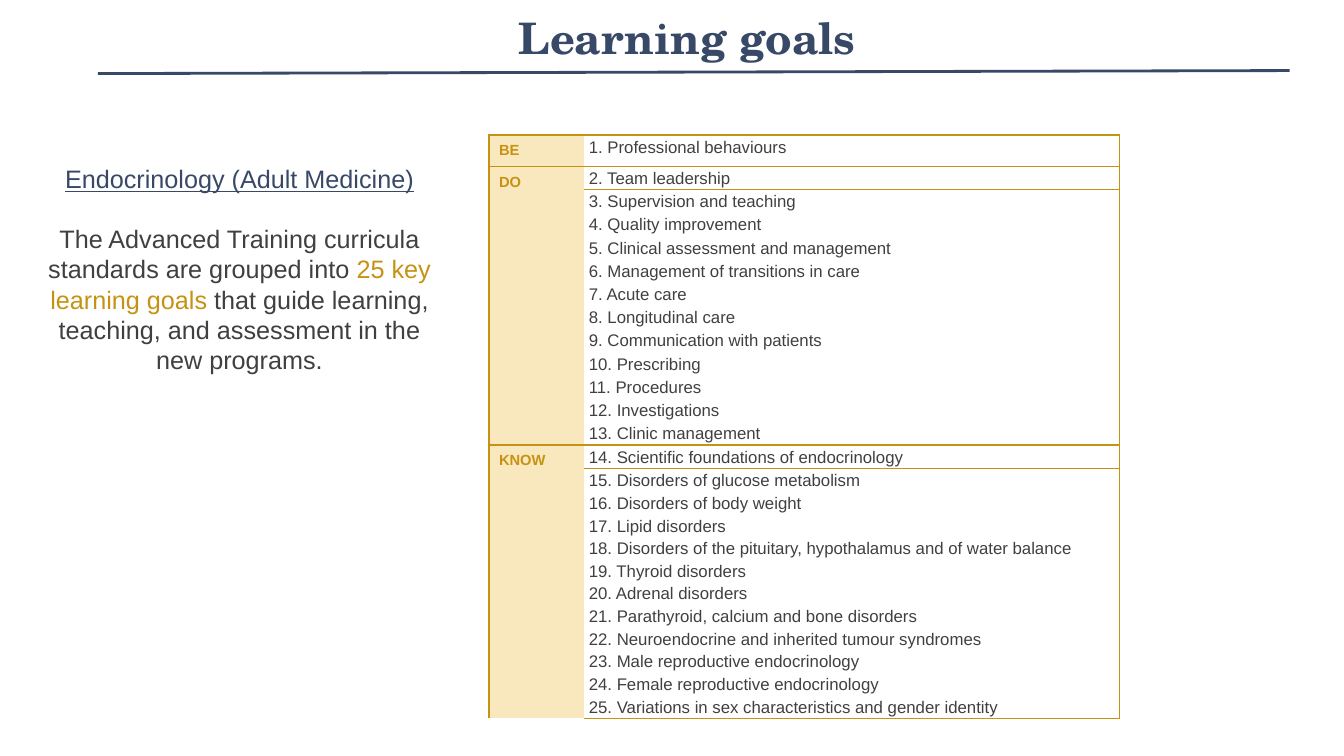
from lxml import etree
from pptx import Presentation
from pptx.dml.color import RGBColor
from pptx.enum import shapes, text
from pptx.oxml import ns
from pptx.util import Inches, Pt

COLORS = {"navy": "384967", "gold": "C69214", "cream": "F9E8BD", "grey": "404040"}
NO_STYLE = "{2D5ABB26-0587-4C30-8999-92F81FD0307C}"
GOALS = {
    "BE": ["Professional behaviours"],
    "DO": [
        "Team leadership", "Supervision and teaching", "Quality improvement",
        "Clinical assessment and management", "Management of transitions in care",
        "Acute care", "Longitudinal care", "Communication with patients",
        "Prescribing", "Procedures", "Investigations", "Clinic management",
    ],
    "KNOW": [
        "Scientific foundations of endocrinology", "Disorders of glucose metabolism",
        "Disorders of body weight", "Lipid disorders",
        "Disorders of the pituitary, hypothalamus and of water balance",
        "Thyroid disorders", "Adrenal disorders",
        "Parathyroid, calcium and bone disorders",
        "Neuroendocrine and inherited tumour syndromes",
        "Male reproductive endocrinology", "Female reproductive endocrinology",
        "Variations in sex characteristics and gender identity",
    ],
}
COMPACT_GOALS = range(17, 25)


def color(name):
    return RGBColor.from_string(COLORS[name])


def format_font(font, size, color_name, bold=False, name="Arial"):
    font.name, font.size, font.bold = name, Pt(size), bold
    font.color.rgb = color(color_name)


def add_title(page, wording):
    title = page.shapes.title
    title.left, title.top = Inches(1.53), Inches(0)
    title.width, title.height = Inches(10.57), Inches(0.73)
    frame = title.text_frame
    frame.text = wording
    frame.vertical_anchor = text.MSO_ANCHOR.MIDDLE
    para = frame.paragraphs[0]
    para.alignment = text.PP_ALIGN.CENTER
    format_font(para.runs[0].font, 31, "navy", True, "TeX Gyre Schola")


def add_rule(page):
    rule = page.shapes.add_connector(
        shapes.MSO_CONNECTOR.STRAIGHT,
        Inches(0.97), Inches(0.73), Inches(12.79), Inches(0.7))
    rule.line.color.rgb = color("navy")
    rule.line.width = Pt(2)
    etree.SubElement(rule._element.spPr, ns.qn("a:effectLst"))


def add_intro(page):
    box = page.shapes.add_textbox(Inches(0.3), Inches(1.57), Inches(4.15), Inches(2.22))
    frame = box.text_frame
    frame.word_wrap = True
    frame.text = "Endocrinology (Adult Medicine)"
    heading = frame.paragraphs[0]
    heading.alignment = text.PP_ALIGN.CENTER
    format_font(heading.runs[0].font, 18, "navy")
    heading.runs[0].font.underline = True

    para = frame.add_paragraph()
    para.alignment = text.PP_ALIGN.CENTER
    para.space_before = Pt(21.5)
    for wording, color_name in (
        ("The Advanced Training curricula standards are grouped into ", "grey"),
        ("25 key learning goals", "gold"),
        (" that guide learning, teaching, and assessment in the new programs.", "grey"),
    ):
        span = para.add_run()
        span.text = wording
        format_font(span.font, 18, color_name)


def set_borders(cell, sides):
    """Draw gold borders on the given sides, in the schema order L, R, T, B."""
    properties = cell._tc.get_or_add_tcPr()
    for position, side in enumerate(s for s in "LRTB" if s in sides):
        border = etree.Element(ns.qn(f"a:ln{side}"), w=str(Pt(1)))
        fill = etree.SubElement(border, ns.qn("a:solidFill"))
        etree.SubElement(fill, ns.qn("a:srgbClr"), val=COLORS["gold"])
        properties.insert(position, border)


def fill_cell(cell, wording, size, color_name, bold, spacing, before, after):
    cell.text_frame.text = wording
    para = cell.text_frame.paragraphs[0]
    para.line_spacing = spacing
    para.space_before, para.space_after = Pt(before), Pt(after)
    format_font(para.runs[0].font, size, color_name, bold)


def add_goal_cell(cell, number, goal):
    compact = number in COMPACT_GOALS
    cell.margin_left = cell.margin_right = Inches(0.05)
    cell.margin_top = Inches(0.01 if compact else 0)
    cell.margin_bottom = Inches(0)
    spacing, before, after = (1.07, 0, 8) if compact else (1.15, 2, 2)
    fill_cell(cell, f"{number}. {goal}", 12, "grey", False, spacing, before, after)
    cell.fill.background()


def add_goal_table(page):
    count = sum(len(goals) for goals in GOALS.values())
    frame = page.shapes.add_table(
        count, 2, Inches(4.85), Inches(1.34), Inches(6.25), Inches(5.35))
    table = frame.table
    table.first_row = table.horz_banding = False
    table._tbl.tblPr.find(ns.qn("a:tableStyleId")).text = NO_STYLE
    table.columns[0].width, table.columns[1].width = Inches(0.94), Inches(5.31)
    for row in table.rows:
        row.height = Inches(0.2)
    table.rows[0].height = Inches(0.31)

    first = 0
    for group, goals in GOALS.items():
        last = first + len(goals) - 1
        for row, goal in enumerate(goals, first):
            label, item = table.cell(row, 0), table.cell(row, 1)
            add_goal_cell(item, row + 1, goal)
            edges = ("T" if row == first else "") + ("B" if row == last else "")
            label.fill.solid()
            label.fill.fore_color.rgb = color("cream")
            set_borders(label, "L" + edges)
            set_borders(item, "R" + edges + ("B" if row == first else ""))
        heading = table.cell(first, 0)
        if last > first:
            heading.merge(table.cell(last, 0))
        fill_cell(heading, group, 10.5, "gold", True, 1.15, 1, 1)
        first = last + 1


def main():
    deck = Presentation()
    deck.slide_width, deck.slide_height = Inches(13.33), Inches(7.5)
    page = deck.slides.add_slide(deck.slide_layouts[5])
    add_title(page, "Learning goals")
    add_rule(page)
    add_intro(page)
    add_goal_table(page)
    deck.save("out.pptx")


if __name__ == "__main__":
    main()
